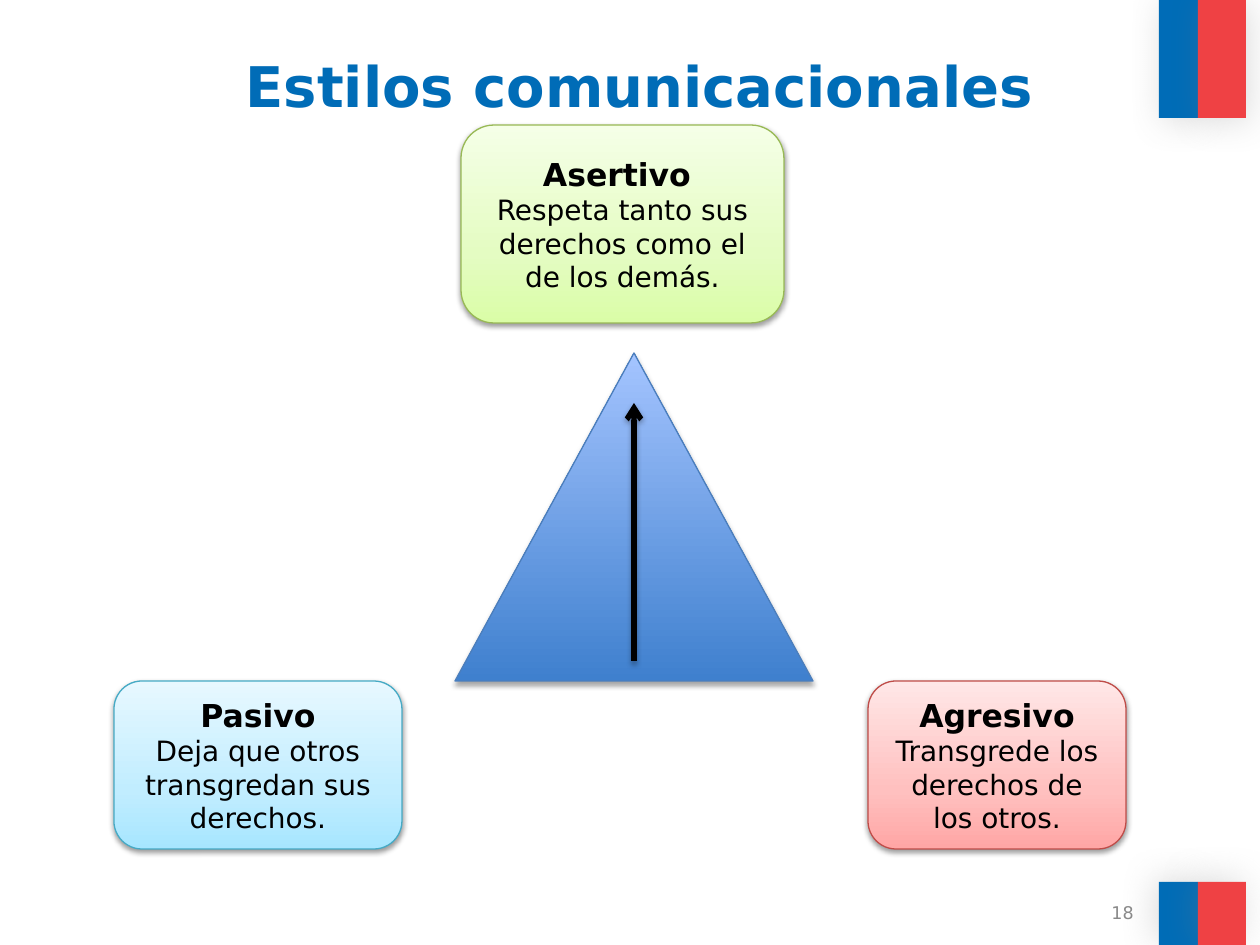
from lxml import etree
from pptx import Presentation
from pptx.dml.color import RGBColor
from pptx.enum.shapes import MSO_CONNECTOR, MSO_SHAPE
from pptx.enum.text import MSO_ANCHOR, PP_ALIGN
from pptx.oxml.ns import qn
from pptx.util import Emu, Pt

RECT, ROUNDED, TRIANGLE = MSO_SHAPE.RECTANGLE, MSO_SHAPE.ROUNDED_RECTANGLE, MSO_SHAPE.ISOSCELES_TRIANGLE
CENTER, RIGHT = PP_ALIGN.CENTER, PP_ALIGN.RIGHT
TOP, MIDDLE = MSO_ANCHOR.TOP, MSO_ANCHOR.MIDDLE

SLIDE_SIZE = (1260, 945)
EMU_PER_PX = 914400 / 126

THEME = {
    "font": "DejaVu Sans",
    "blue": "006CB7", "red": "EF4144", "black": "000000", "grey": "898989",
    "title": 32, "style_name": 18, "style_text": 16, "page": 10,
    "outline": 0.75, "arrow": 3,
    # Gradients run from bottom to top: (position %, colour)
    "green_box": ([(0, "DAFDA7"), (35, "E4FCC2"), (100, "F5FFE7")], "98B955"),
    "red_box": ([(0, "FFA6A5"), (35, "FFC0BF"), (100, "FFE7E7")], "BF4C48"),
    "blue_box": ([(0, "A7E6FF"), (35, "C1EDFF"), (100, "E7F8FF")], "46AAC5"),
    "triangle": ([(0, "3F80CE"), (100, "A4C4FF")], "4B7EBC"),
    # Shadows: colour, opacity %, blur pt, distance pt, direction in degrees
    "box_shadow": ("000000", 38, 3.1, 1.6, 90),
    "figure_shadow": ("000000", 35, 3.1, 1.8, 90),
    "flag_top_shadow": ("808080", 25, 20, 3, 45),
    "flag_bottom_shadow": ("808080", 25, 20, 3, 215),
}

TITLE = ("Estilos comunicacionales", (77, 40, 1125, 115))
PAGE_NUMBER = ("18", (852, 900, 294, 26))
FLAG_STRIPES = [(1159, 39, "blue"), (1198, 48, "red")]
FLAG_BANDS = [(0, 118, "flag_top_shadow"), (882, 63, "flag_bottom_shadow")]
TRIANGLE_BOX = (455, 353, 358, 328)
ARROW_BOTTOM, ARROW_TOP = 661, 403
# Each style: paragraphs of (text, role) runs, box, look
STYLES = [
    ([[("Asertivo ", "style_name")],
      [("Respeta tanto sus derechos como el de los demás.", "style_text")]],
     (461, 125, 323, 198), "green_box"),
    ([[("Agresivo ", "style_name"),
       ("Transgrede los derechos de los otros.", "style_text")]],
     (868, 681, 258, 168), "red_box"),
    ([[("Pasivo", "style_name")],
      [("Deja que otros transgredan sus derechos.", "style_text")]],
     (114, 681, 288, 168), "blue_box"),
]


def px(length):
    return Emu(round(length * EMU_PER_PX))


def rgb(name):
    return RGBColor.from_string(THEME.get(name, name))


def place(shape, box):
    shape.left, shape.top, shape.width, shape.height = map(px, box)


def write(frame, paragraphs, color="black", align=CENTER, anchor=MIDDLE, bold_roles=()):
    """Fill a frame with paragraphs of (text, role) runs; the role sets the size."""
    frame.word_wrap = True
    frame.vertical_anchor = anchor
    for index, runs in enumerate(paragraphs):
        paragraph = frame.paragraphs[0] if index == 0 else frame.add_paragraph()
        paragraph.alignment = align
        for text, role in runs:
            run = paragraph.add_run()
            run.text = text
            run.font.name = THEME["font"]
            run.font.size = Pt(THEME[role])
            run.font.bold = role in bold_roles
            run.font.color.rgb = rgb(color)


def add_color(parent, color):
    return etree.SubElement(parent, qn("a:srgbClr"), val=color)


def add_shadow(shape, look):
    """Append an outer shadow; call it after the fill and line are set."""
    color, opacity, blur, distance, direction = THEME[look]
    effects = etree.SubElement(shape._element.spPr, qn("a:effectLst"))
    outer = etree.SubElement(
        effects, qn("a:outerShdw"), blurRad=str(Pt(blur)), dist=str(Pt(distance)),
        dir=str(direction * 60000), algn="ctr", rotWithShape="0")
    etree.SubElement(add_color(outer, color), qn("a:alpha"), val=str(opacity * 1000))


def add_gradient_shape(slide, kind, box, look, shadow):
    stops, outline = THEME[look]
    shape = slide.shapes.add_shape(kind, *map(px, box))
    shape.fill.gradient()
    shape.fill.gradient_angle = 90
    stop_list = shape._element.spPr.find(".//" + qn("a:gsLst"))
    for old_stop in list(stop_list):
        stop_list.remove(old_stop)
    for position, color in stops:
        add_color(etree.SubElement(stop_list, qn("a:gs"), pos=str(position * 1000)), color)
    shape.line.color.rgb = rgb(outline)
    shape.line.width = Pt(THEME["outline"])
    add_shadow(shape, shadow)
    return shape


def add_flag(slide):
    for top, height, shadow in FLAG_BANDS:
        for left, width, color in FLAG_STRIPES:
            stripe = slide.shapes.add_shape(RECT, *map(px, (left, top, width, height)))
            stripe.fill.solid()
            stripe.fill.fore_color.rgb = rgb(color)
            stripe.line.fill.background()
            add_shadow(stripe, shadow)


def add_arrow(slide):
    left, _, width, _ = TRIANGLE_BOX
    middle = px(left + width / 2)
    arrow = slide.shapes.add_connector(
        MSO_CONNECTOR.STRAIGHT, middle, px(ARROW_BOTTOM), middle, px(ARROW_TOP))
    arrow.line.color.rgb = rgb("black")
    arrow.line.width = Pt(THEME["arrow"])
    etree.SubElement(arrow.line._get_or_add_ln(), qn("a:tailEnd"), type="arrow")
    add_shadow(arrow, "figure_shadow")


def main():
    deck = Presentation()
    deck.slide_width, deck.slide_height = map(px, SLIDE_SIZE)
    slide = deck.slides.add_slide(deck.slide_layouts[5])

    add_flag(slide)

    title_text, title_box = TITLE
    title = slide.shapes.title
    place(title, title_box)
    title.text_frame.margin_top = px(11)
    write(title.text_frame, [[(title_text, "title")]], color="blue", anchor=TOP,
          bold_roles=("title",))

    add_gradient_shape(slide, TRIANGLE, TRIANGLE_BOX, "triangle", "figure_shadow")
    for paragraphs, box, look in STYLES:
        style_box = add_gradient_shape(slide, ROUNDED, box, look, "box_shadow")
        write(style_box.text_frame, paragraphs, bold_roles=("style_name",))

    page_text, page_box = PAGE_NUMBER
    page = slide.shapes.add_textbox(*map(px, page_box))
    write(page.text_frame, [[(page_text, "page")]], color="grey", align=RIGHT)

    add_arrow(slide)
    deck.save("out.pptx")


if __name__ == "__main__":
    main()
